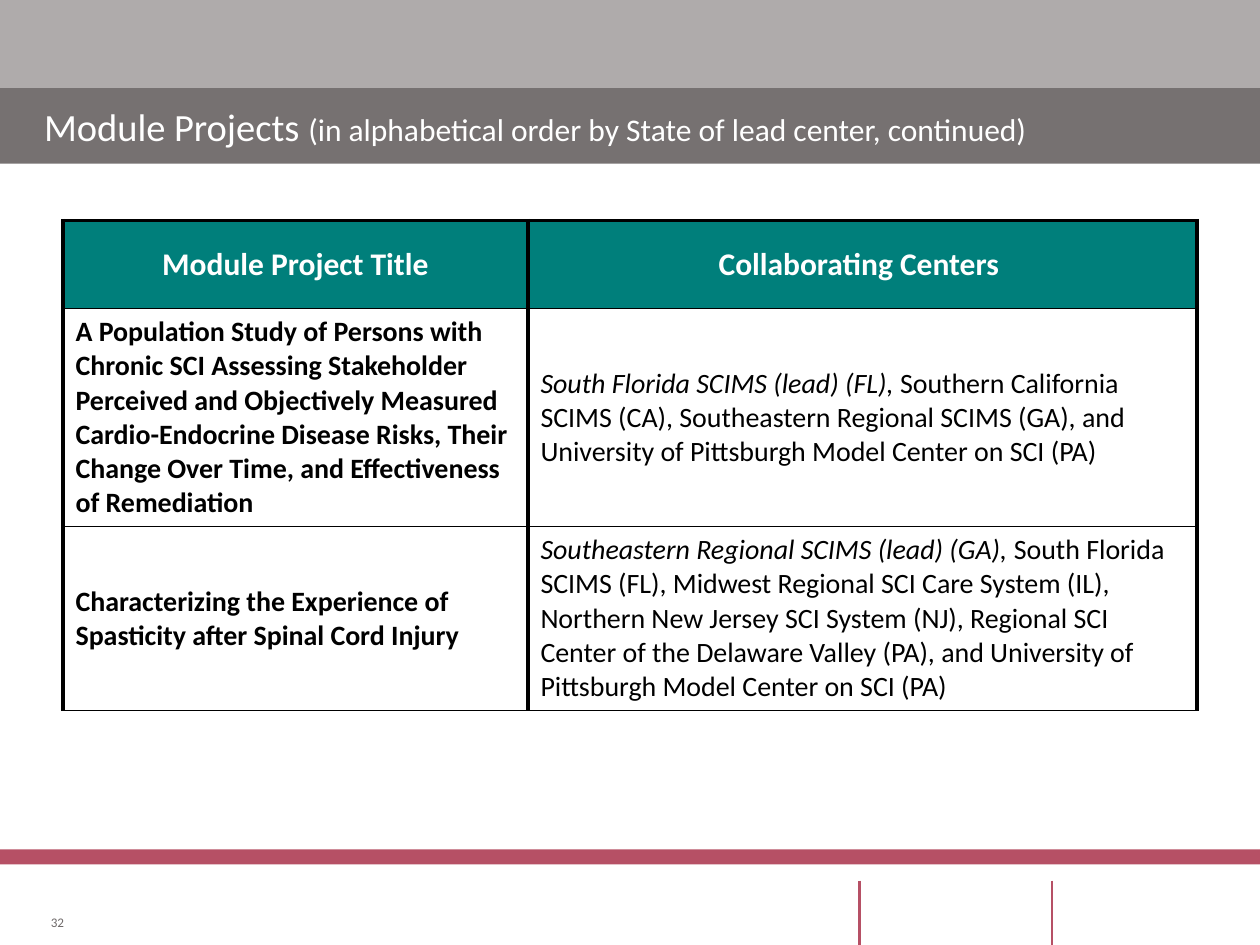
from dataclasses import dataclass

from lxml import etree
from pptx import Presentation
from pptx import util as u
from pptx.dml.color import RGBColor
from pptx.enum import shapes, text
from pptx.oxml.ns import qn


@dataclass(frozen=True)
class Theme:
    font: str = "Calibri"
    white: str = "FFFFFF"
    black: str = "000000"
    top_gray: str = "AFABAB"
    title_gray: str = "767171"
    rose: str = "B65065"
    teal: str = "007F7B"
    number_gray: str = "6F6A6A"
    title_size: float = 22
    heading_size: float = 18
    body_size: float = 16
    number_size: float = 7.5
    thick: float = 2.25
    thin: float = 1


THEME = Theme()
WIDTH, HEIGHT = u.Inches(10), u.Inches(7.5)
TITLE_TOP, TITLE_HEIGHT = 0.7, 0.6

HEADINGS = ["Module Project Title", "Collaborating Centers "]
# Project title, lead center, other centers
PROJECTS = [
    ("A Population Study of Persons with Chronic SCI Assessing Stakeholder "
     "Perceived and Objectively Measured Cardio-Endocrine Disease Risks, "
     "Their Change Over Time, and Effectiveness of Remediation",
     "South Florida SCIMS (lead) (FL), ",
     "Southern California SCIMS (CA), Southeastern Regional SCIMS (GA), and "
     "University of Pittsburgh Model Center on SCI (PA)"),
    ("Characterizing the Experience of Spasticity after Spinal Cord Injury",
     "Southeastern Regional SCIMS (lead) (GA),",
     " South Florida SCIMS (FL), Midwest Regional SCI Care System (IL), "
     "Northern New Jersey SCI System (NJ), Regional SCI Center of the "
     "Delaware Valley (PA), and University of Pittsburgh Model Center on "
     "SCI (PA)"),
]
COLUMN_SHARES = [0.41, 0.59]
ROW_HEIGHTS = [0.7, 1.72, 1.42]


def rgb(color):
    return RGBColor.from_string(color)


def add_run(paragraph, words, size, color, bold=False, italic=False):
    run = paragraph.add_run()
    run.text = words
    run.font.name = THEME.font
    run.font.size = u.Pt(size)
    run.font.color.rgb = rgb(color)
    run.font.bold, run.font.italic = bold, italic


def add_band(slide, top, height, color):
    """Full-width bar across the slide."""
    band = slide.shapes.add_shape(shapes.MSO_SHAPE.RECTANGLE, 0,
                                  u.Inches(top), WIDTH, u.Inches(height))
    band.shadow.inherit = False
    band.fill.solid()
    band.fill.fore_color.rgb = rgb(color)
    band.line.fill.background()


def add_footer_rule(slide, left):
    """Vertical rule running down to the slide's bottom edge."""
    rule = slide.shapes.add_connector(
        shapes.MSO_CONNECTOR.STRAIGHT, u.Inches(left), u.Inches(6.99),
        u.Inches(left), HEIGHT)
    rule.line.color.rgb = rgb(THEME.rose)
    rule.line.width = u.Pt(1.5)
    etree.SubElement(rule.element.spPr, qn("a:effectLst"))


def fill_title(slide):
    title = slide.shapes.title
    title.left, title.top = 0, u.Inches(TITLE_TOP)
    title.width, title.height = WIDTH, u.Inches(TITLE_HEIGHT)
    frame = title.text_frame
    frame.auto_size = text.MSO_AUTO_SIZE.NONE
    frame.vertical_anchor = text.MSO_ANCHOR.MIDDLE
    frame.margin_left = frame.margin_right = u.Inches(0.35)
    frame.margin_top = frame.margin_bottom = 0
    heading = frame.paragraphs[0]
    heading.alignment = text.PP_ALIGN.LEFT
    add_run(heading, "Module Projects ", THEME.title_size, THEME.white)
    add_run(heading, "(in alphabetical order by State of lead center, continued)",
            THEME.heading_size, THEME.white)
    # Bring the title in front of the bands
    title.element.getparent().append(title.element)


def set_borders(cell, top):
    """Thick sides, thin bottom, and a top of the given width."""
    widths = {"L": THEME.thick, "R": THEME.thick, "T": top, "B": THEME.thin}
    properties = cell._tc.get_or_add_tcPr()
    for position, (side, width) in enumerate(widths.items()):
        border = etree.Element(qn(f"a:ln{side}"), w=str(u.Pt(width)))
        fill = etree.SubElement(border, qn("a:solidFill"))
        etree.SubElement(fill, qn("a:srgbClr"), val=THEME.black)
        properties.insert(position, border)


def format_cell(cell, fill, top):
    cell.vertical_anchor = text.MSO_ANCHOR.MIDDLE
    cell.fill.solid()
    cell.fill.fore_color.rgb = rgb(fill)
    set_borders(cell, top)
    return cell.text_frame.paragraphs[0]


def add_project_table(slide):
    width = 0.9 * WIDTH
    projects = slide.shapes.add_table(
        len(ROW_HEIGHTS), len(COLUMN_SHARES), u.Inches(0.5), u.Inches(1.75),
        int(width), u.Inches(sum(ROW_HEIGHTS))).table
    projects.horz_banding = False
    for column, share in zip(projects.columns, COLUMN_SHARES):
        column.width = int(width * share)
    for row, height in zip(projects.rows, ROW_HEIGHTS):
        row.height = u.Inches(height)

    for column, heading in enumerate(HEADINGS):
        label = format_cell(projects.cell(0, column), THEME.teal, THEME.thick)
        label.alignment = text.PP_ALIGN.CENTER
        add_run(label, heading, THEME.heading_size, THEME.white, bold=True)

    for row, (project, lead, partners) in enumerate(PROJECTS, start=1):
        name, centers = (format_cell(projects.cell(row, column), THEME.white,
                                     THEME.thin) for column in range(2))
        add_run(name, project, THEME.body_size, THEME.black, bold=True)
        add_run(centers, lead, THEME.body_size, THEME.black, italic=True)
        add_run(centers, partners, THEME.body_size, THEME.black)


def add_page_number(slide, number):
    frame = slide.shapes.add_textbox(u.Inches(0.38), u.Inches(7.25),
                                     u.Inches(0.13), u.Inches(0.13)).text_frame
    frame.margin_left = frame.margin_right = 0
    frame.margin_top = frame.margin_bottom = 0
    frame.word_wrap = False
    frame.auto_size = text.MSO_AUTO_SIZE.SHAPE_TO_FIT_TEXT
    frame.vertical_anchor = text.MSO_ANCHOR.BOTTOM
    label = frame.paragraphs[0]
    label.alignment = text.PP_ALIGN.RIGHT
    add_run(label, number, THEME.number_size, THEME.number_gray)


def main():
    deck = Presentation()
    deck.slide_width, deck.slide_height = WIDTH, HEIGHT
    slide = deck.slides.add_slide(deck.slide_layouts.get_by_name("Title Only"))

    # Background bands and footer rules
    add_band(slide, 0, 0.71, THEME.top_gray)
    add_band(slide, TITLE_TOP, TITLE_HEIGHT, THEME.title_gray)
    add_band(slide, 6.74, 0.12, THEME.rose)
    for left in (6.82, 8.35):
        add_footer_rule(slide, left)

    # Content
    fill_title(slide)
    add_project_table(slide)
    add_page_number(slide, "32")
    deck.save("out.pptx")


if __name__ == "__main__":
    main()
